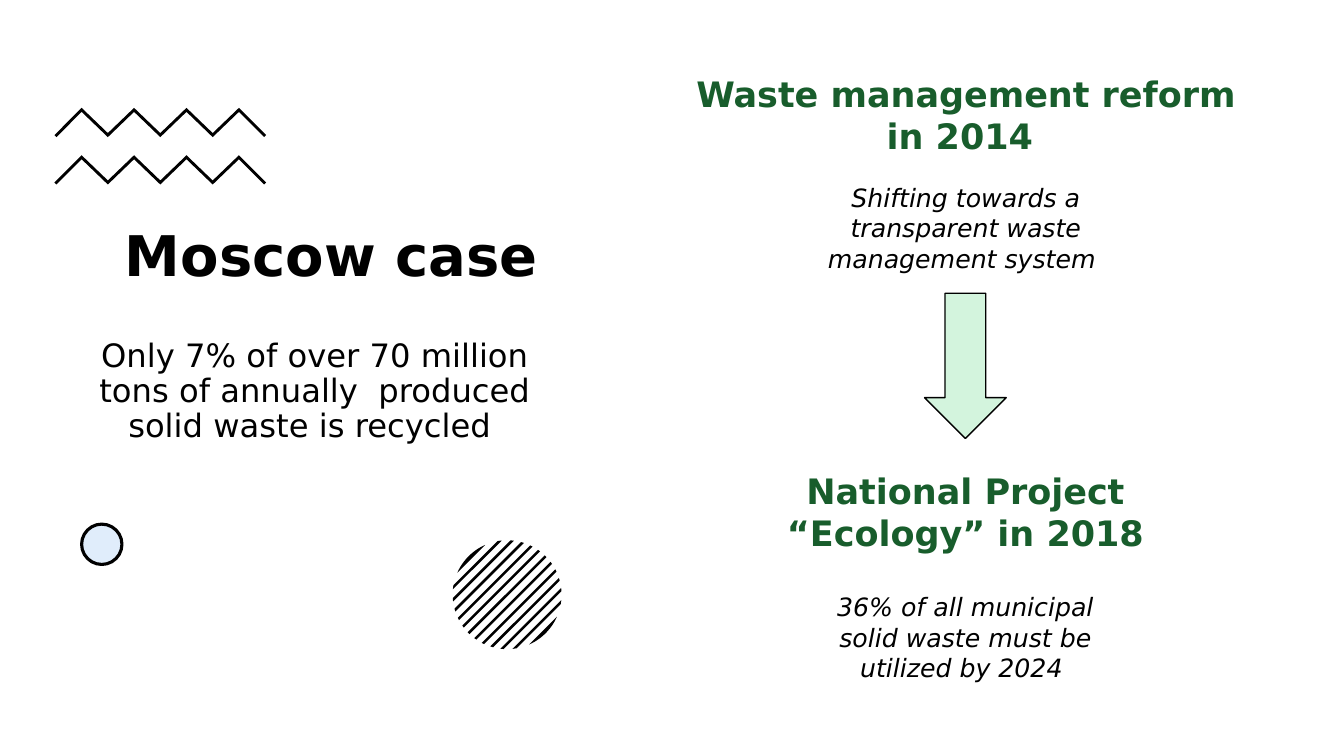
from math import acos, cos, pi, sin
from lxml.etree import SubElement
from pptx import Presentation
from pptx.dml.color import RGBColor
from pptx.enum.shapes import MSO_SHAPE
from pptx.enum.text import MSO_ANCHOR, MSO_AUTO_SIZE, PP_ALIGN
from pptx.oxml.ns import qn
from pptx.util import Inches, Pt

BLACK = RGBColor(0x00, 0x00, 0x00)
WHITE = RGBColor(0xFF, 0xFF, 0xFF)
GREEN = RGBColor(0x18, 0x5D, 0x2C)
MINT = RGBColor(0xD3, 0xF4, 0xDD)
BLUE = RGBColor(0x67, 0xA6, 0xEE)

FACE = "DejaVu Sans"
TITLE = {"name": FACE, "size": Pt(40), "bold": True}
BODY = {"name": FACE, "size": Pt(23), "bold": False}
HEAD = {"name": FACE, "size": Pt(25), "bold": True}
NOTE = {"name": FACE, "size": Pt(18), "italic": True}


def place(shape, box):
    for name, value in zip(("left", "top", "width", "height"), box):
        setattr(shape, name, Inches(value))


def write(shape, text, style, color=BLACK, gap=1.0, anchor=MSO_ANCHOR.TOP):
    frame = shape.text_frame
    frame.text = text
    frame.word_wrap = True
    frame.auto_size = MSO_AUTO_SIZE.NONE
    frame.vertical_anchor = anchor
    para = frame.paragraphs[0]
    props = para._p.get_or_add_pPr()
    props.set("marL", "0")
    props.set("indent", "0")
    SubElement(props, qn("a:buNone"))
    para.alignment = PP_ALIGN.CENTER
    para.line_spacing = gap
    para.space_before = Pt(0)
    font = para.runs[0].font
    for name, value in style.items():
        setattr(font, name, value)
    font.color.rgb = color


def label(slide, box, text, style, color=BLACK):
    write(slide.shapes.add_textbox(*map(Inches, box)), text, style, color)


def paint(shape, fill, line=None, width=1):
    shape.shadow.inherit = False
    shape.fill.solid()
    shape.fill.fore_color.rgb = fill
    if line is None:
        shape.line.fill.background()
    else:
        shape.line.color.rgb = line
        shape.line.width = Pt(width)


def figure(slide, kind, box, fill, line=None, width=1):
    shape = slide.shapes.add_shape(kind, *map(Inches, box))
    paint(shape, fill, line, width)
    return shape


def fade(shape, share):
    color = shape.fill._xPr.find(qn("a:solidFill"))[0]
    SubElement(color, qn("a:alpha")).set("val", str(share * 1000))


def outline(slide, points):
    spots = [(Inches(x), Inches(y)) for x, y in points]
    pen = slide.shapes.build_freeform(*spots[0])
    pen.add_line_segments(spots[1:], close=True)
    paint(pen.convert_to_shape(), BLACK)


def zigzag(slide, left, top, teeth=4, step=0.26, thick=0.04):
    ridge = [(left + i * step, top + (0 if i % 2 else 0.25))
             for i in range(1, 2 * teeth)]
    under = [(x, y + thick) for x, y in ridge]
    right = left + 2 * teeth * step
    outline(slide, [(left - 0.01, top + 0.27), *ridge,
                    (right + 0.01, top + 0.27), (right - 0.01, top + 0.29),
                    *reversed(under), (left + 0.01, top + 0.29)])


def stripes(slide, mid_x, mid_y, radius, reach=6, step=0.086, half=0.0125):
    """Diagonal bands cut by a circle; the end bands run out to its rim."""
    for k in range(-reach, reach + 1):
        side = -1 if k < 0 else 1
        near = abs(k) * step - half
        far = radius if abs(k) == reach else near + 2 * half
        start, stop = acos(near / radius), acos(far / radius)
        arc = [start + (stop - start) * i / 6 for i in range(7)]
        turns = arc + [-angle for angle in reversed(arc)]
        outline(slide, [(mid_x + side * radius * cos(pi / 4 + turn),
                         mid_y + side * radius * sin(pi / 4 + turn))
                        for turn in turns])


def main():
    deck = Presentation()
    deck.slide_width, deck.slide_height = Inches(13.33), Inches(7.5)
    slide = deck.slides.add_slide(deck.slide_layouts[1])
    slide.background.fill.solid()
    slide.background.fill.fore_color.rgb = WHITE

    # Title and statement on the left
    title, body = slide.shapes.title, slide.placeholders[1]
    place(title, (0.43, 1.64, 5.71, 1.27))
    write(title, "Moscow case", TITLE, gap=0.9, anchor=MSO_ANCHOR.BOTTOM)
    place(body, (0.71, 3.32, 4.83, 1.68))
    write(body, "Only 7% of over 70 million tons of annually  produced "
                "solid waste is recycled ", BODY, gap=0.9)

    # Ornaments: zigzags, dot, striped disc
    for top in (1.07, 1.54):
        zigzag(slide, 0.55, top)
    dot = (0.81, 5.2, 0.4, 0.4)
    figure(slide, MSO_SHAPE.OVAL, dot, WHITE, WHITE, 2.25)
    fade(figure(slide, MSO_SHAPE.OVAL, dot, BLUE, BLACK, 2.25), 20)
    stripes(slide, 5.03, 5.9, 0.54)

    # Two policy steps on the right, joined by an arrow
    figure(slide, MSO_SHAPE.DOWN_ARROW, (9.17, 2.91, 0.81, 1.44), MINT, BLACK)
    label(slide, (6.64, 0.67, 5.88, 0.94),
          "Waste management reform in 2014 ", HEAD, GREEN)
    label(slide, (7.63, 1.76, 3.9, 1.01),
          "Shifting towards a transparent waste management system ", NOTE)
    label(slide, (7.38, 4.61, 4.39, 0.94),
          "National Project “Ecology” in 2018", HEAD, GREEN)
    label(slide, (7.92, 5.82, 3.31, 1.01),
          "36% of all municipal solid waste must be utilized by 2024 ", NOTE)

    deck.save("out.pptx")


if __name__ == "__main__":
    main()
